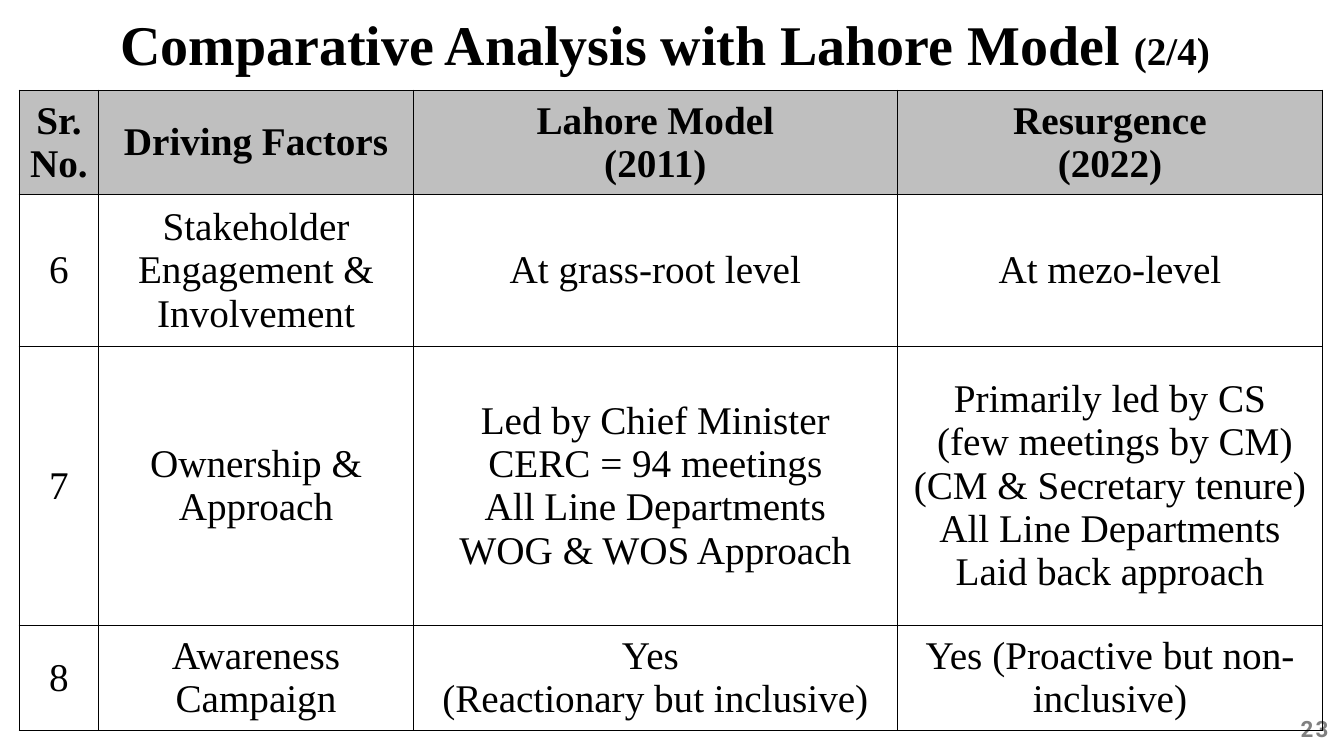
from lxml import etree
from pptx import Presentation
from pptx import util as u
from pptx.dml.color import RGBColor
from pptx.enum import text
from pptx.oxml.ns import qn

BLACK = RGBColor(0, 0, 0)
GREY = RGBColor(0x80, 0x80, 0x80)
HEADER_FILL = RGBColor(0xBF, 0xBF, 0xBF)
SERIF = "Times New Roman"

COLUMN_WIDTHS = (56.75, 224.75, 345.75, 303.75)
ROW_HEIGHTS = (74.25, 108.5, 199.25, 75)
ROWS = (
    ("Sr. No.", "Driving Factors", "Lahore Model\n(2011)", "Resurgence\n(2022)"),
    ("6", "Stakeholder Engagement & Involvement", "At grass-root level",
     "At mezo-level"),
    ("7", "Ownership & Approach",
     "Led by Chief Minister\nCERC = 94 meetings\nAll Line Departments\n"
     "WOG & WOS Approach",
     "Primarily led by CS\n (few meetings by CM)\n(CM & Secretary tenure)\n"
     "All Line Departments\nLaid back approach"),
    ("8", "Awareness Campaign", "Yes \n(Reactionary but inclusive)",
     "Yes (Proactive but non-inclusive)"),
)


def set_font(font, name, size, color, bold):
    font.name = name
    font.size = u.Pt(size)
    font.color.rgb = color
    font.bold = bold


def add_text_box(s, left, top, width, height):
    sp = s.shapes.add_textbox(u.Pt(left), u.Pt(top), u.Pt(width), u.Pt(height))
    return sp.text_frame


def add_page_number(s, number):
    tf = add_text_box(s, 916.5, 507, 39.5, 26.5)
    tf.word_wrap = False
    p = tf.paragraphs[0]
    p.alignment = text.PP_ALIGN.RIGHT
    r = p.add_run()
    r.text = number
    set_font(r.font, "Roboto", 16, GREY, True)
    r.font._element.set("spc", "150")


def add_title(s, title, part):
    tf = add_text_box(s, 0, 5, 960, 54)
    tf.word_wrap = True
    tf.vertical_anchor = text.MSO_ANCHOR.BOTTOM
    p = tf.paragraphs[0]
    p.alignment = text.PP_ALIGN.CENTER
    p.line_spacing = 0.9
    for words, size in ((title, 40), (part, 28), (" ", 40)):
        r = p.add_run()
        r.text = words
        set_font(r.font, SERIF, size, BLACK, True)


def add_borders(cell):
    tcPr = cell._tc.get_or_add_tcPr()
    for i, side in enumerate(("lnL", "lnR", "lnT", "lnB")):
        ln = etree.Element(qn("a:" + side), w=str(u.Pt(1)))
        fill = etree.SubElement(ln, qn("a:solidFill"))
        etree.SubElement(fill, qn("a:srgbClr"), val=str(BLACK))
        tcPr.insert(i, ln)


def fill_cell(cell, words, header):
    cell.text = words
    cell.vertical_anchor = text.MSO_ANCHOR.MIDDLE
    for p in cell.text_frame.paragraphs:
        p.alignment = text.PP_ALIGN.CENTER
        set_font(p.font, SERIF, 28, BLACK, header)
    if header:
        cell.fill.solid()
        cell.fill.fore_color.rgb = HEADER_FILL
    else:
        cell.fill.background()
    add_borders(cell)


def add_comparison_table(s):
    table = s.shapes.add_table(
        len(ROWS), len(COLUMN_WIDTHS), u.Pt(13.75), u.Pt(64.5),
        u.Pt(sum(COLUMN_WIDTHS)), u.Pt(sum(ROW_HEIGHTS))).table
    table.horz_banding = False
    for column, width in zip(table.columns, COLUMN_WIDTHS):
        column.width = u.Pt(width)
    for i, (row, height) in enumerate(zip(table.rows, ROW_HEIGHTS)):
        row.height = u.Pt(height)
        for cell, words in zip(row.cells, ROWS[i]):
            fill_cell(cell, words, header=i == 0)


def main():
    prs = Presentation()
    prs.slide_width, prs.slide_height = u.Pt(960), u.Pt(540)
    s = prs.slides.add_slide(prs.slide_layouts[6])

    # Page number, behind the table's corner
    add_page_number(s, "23")
    # Comparison of the two models
    add_comparison_table(s)
    # Title
    add_title(s, "Comparative Analysis with Lahore Model ", "(2/4)")

    prs.save("out.pptx")


if __name__ == "__main__":
    main()
